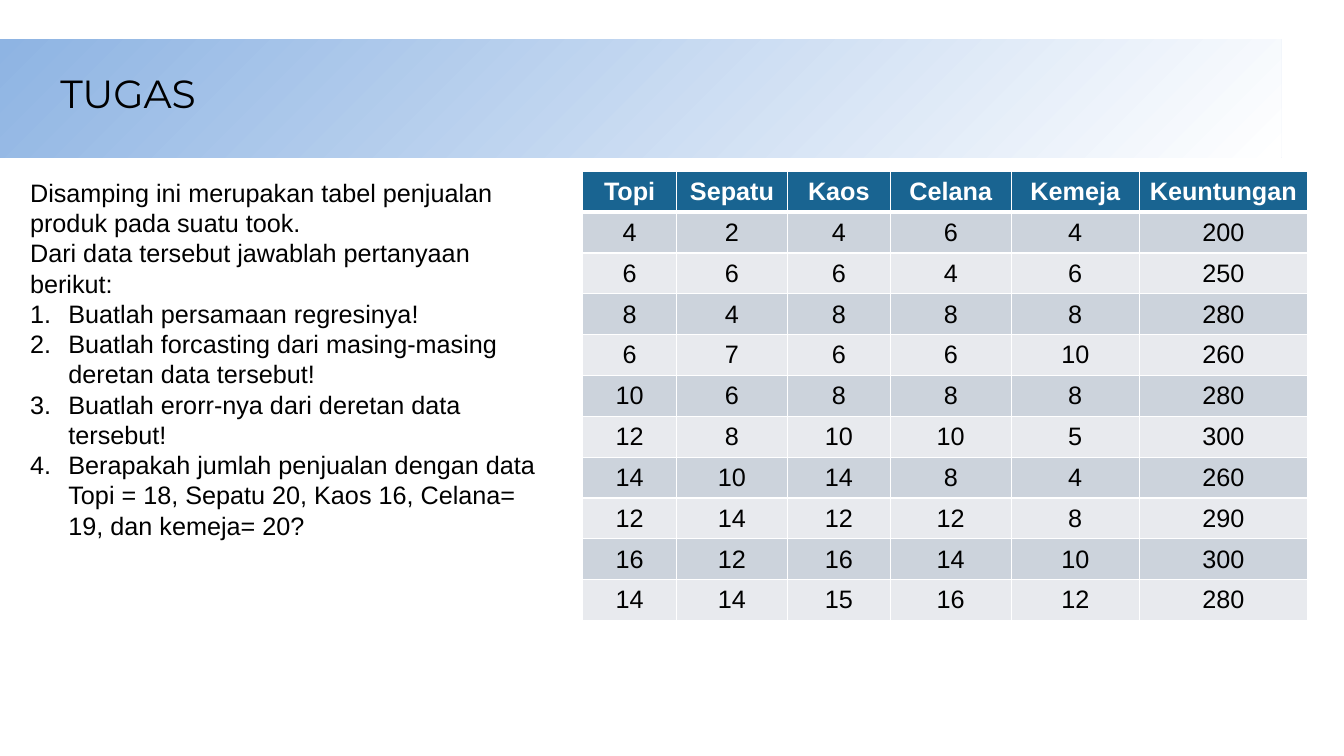
import pptx
import pptx.dml.color
import pptx.enum.shapes
import pptx.enum.text
import pptx.oxml
import pptx.oxml.ns
import pptx.util

# Content
TITLE = "TUGAS"
INTRO = [
    "Disamping ini merupakan tabel penjualan produk pada suatu took.",
    "Dari data tersebut jawablah pertanyaan berikut:",
]
QUESTIONS = [
    "Buatlah persamaan regresinya!",
    "Buatlah forcasting dari masing-masing deretan data tersebut!",
    "Buatlah erorr-nya dari deretan data tersebut!",
    "Berapakah jumlah penjualan dengan data Topi = 18, Sepatu 20, Kaos 16, "
    "Celana= 19, dan kemeja= 20?",
]
SALES = [
    ("Topi", "Sepatu", "Kaos", "Celana", "Kemeja", "Keuntungan"),
    (4, 2, 4, 6, 4, 200),
    (6, 6, 6, 4, 6, 250),
    (8, 4, 8, 8, 8, 280),
    (6, 7, 6, 6, 10, 260),
    (10, 6, 8, 8, 8, 280),
    (12, 8, 10, 10, 5, 300),
    (14, 10, 14, 8, 4, 260),
    (12, 14, 12, 12, 8, 290),
    (16, 12, 16, 14, 10, 300),
    (14, 14, 15, 16, 12, 280),
]

# Layout, in inches
WIDTH, HEIGHT = 13.33, 7.5
BAND = (0, 0.39, 12.71, 1.17)
TITLE_BOX = (0.5, 0.64, 3.79, 0.57)
TASK_BOX = (0.2, 1.71, 5.42, 3.74)
TABLE_LEFT, TABLE_TOP = 5.78, 1.7
COLUMNS = (0.93, 1.1, 1.02, 1.2, 1.27, 1.67)
ROW = 4.46 / len(SALES)
INDENT = 0.38

BLACK, WHITE = "000000", "FFFFFF"
HEADER, STRIPES = "196491", ("E8EAEE", "CCD3DC")
inch = pptx.util.Inches


def color(value):
    return pptx.dml.color.RGBColor.from_string(value)


def style(para, face, size, ink=BLACK, bold=False):
    para.font.name = face
    para.font.size = pptx.util.Pt(size)
    para.font.color.rgb = color(ink)
    para.font.bold = bold


def add_text(page, place, lines, face, size):
    frame = page.shapes.add_textbox(*map(inch, place)).text_frame
    frame.word_wrap = True
    frame.auto_size = pptx.enum.text.MSO_AUTO_SIZE.SHAPE_TO_FIT_TEXT
    frame.text = "\n".join(lines)
    for para in frame.paragraphs:
        style(para, face, size)
    return frame


def number(para):
    props = para._p.get_or_add_pPr()
    props.set("marL", str(inch(INDENT)))
    props.set("indent", str(-inch(INDENT)))
    bullet = pptx.oxml.parse_xml(
        f'<a:buAutoNum {pptx.oxml.ns.nsdecls("a")} type="arabicPeriod"/>')
    props.insert(0, bullet)


def add_borders(cell, top, bottom):
    props = cell._tc.get_or_add_tcPr()
    for side, points in (("L", 1), ("R", 1), ("T", top), ("B", bottom)):
        props.append(pptx.oxml.parse_xml(
            f'<a:ln{side} {pptx.oxml.ns.nsdecls("a")} w="{pptx.util.Pt(points)}">'
            f'<a:solidFill><a:srgbClr val="{WHITE}"/></a:solidFill></a:ln{side}>'))


def add_band(page):
    band = page.shapes.add_shape(
        pptx.enum.shapes.MSO_SHAPE.RECTANGLE, *map(inch, BAND))
    band.shadow.inherit = False
    band.line.fill.background()
    band.fill.gradient()
    band.fill.gradient_angle = 315
    for stop, shade in zip(band.fill.gradient_stops, ("8EB4E3", WHITE)):
        stop.color.rgb = color(shade)


def add_sales(page):
    table = page.shapes.add_table(
        len(SALES), len(COLUMNS), inch(TABLE_LEFT), inch(TABLE_TOP),
        inch(sum(COLUMNS)), inch(ROW * len(SALES))).table
    for column, width in zip(table.columns, COLUMNS):
        column.width = inch(width)
    for r, values in enumerate(SALES):
        table.rows[r].height = inch(ROW)
        head = r == 0
        for c, value in enumerate(values):
            cell = table.cell(r, c)
            cell.text = str(value)
            cell.margin_left = cell.margin_right = inch(0.08)
            cell.vertical_anchor = pptx.enum.text.MSO_ANCHOR.MIDDLE
            add_borders(cell, 3 if r == 1 else 1, 3 if head else 1)
            cell.fill.solid()
            cell.fill.fore_color.rgb = color(HEADER if head else STRIPES[r % 2])
            para = cell.text_frame.paragraphs[0]
            para.alignment = pptx.enum.text.PP_ALIGN.CENTER
            style(para, "Arial", 18, WHITE if head else BLACK, head)


def main():
    deck = pptx.Presentation()
    deck.slide_width, deck.slide_height = inch(WIDTH), inch(HEIGHT)
    page = deck.slides.add_slide(deck.slide_layouts[6])

    # Title band
    add_band(page)
    add_text(page, TITLE_BOX, [TITLE], "Montserrat", 28)

    # Sales table
    add_sales(page)

    # Assignment with numbered questions
    task = add_text(page, TASK_BOX, INTRO + QUESTIONS, "Arial", 18)
    for para in task.paragraphs[len(INTRO):]:
        number(para)

    deck.save("out.pptx")


if __name__ == "__main__":
    main()
